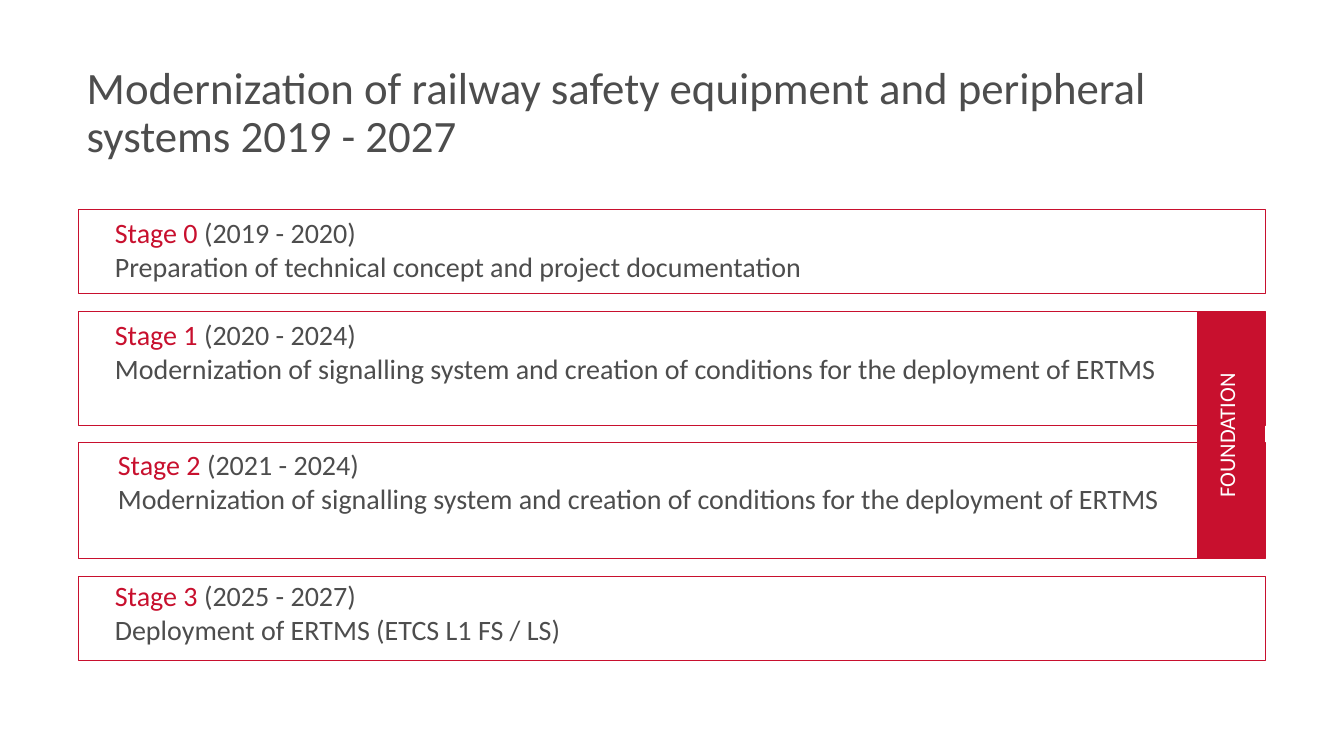
from pptx import Presentation
from pptx import util as u
from pptx.dml.color import RGBColor
from pptx.enum import shapes, text

THEME = {
    "font": "Calibri",
    "red": RGBColor.from_string("C8102E"),
    "grey": RGBColor.from_string("4D4D4D"),
    "white": RGBColor.from_string("FFFFFF"),
    "title": 32,
    "body": 20,
    "label": 16,
}
LEFT, WIDTH = 0.78, 11.77
FOUNDATION_WIDTH = 0.68
SIGNALLING = "Modernization of signalling system and creation of conditions for the deployment of ERTMS"
STAGES = [
    (2.08, 0.83, 1.04, 2.09, "Stage 0 ", "(2019 - 2020)",
     "Preparation of technical concept and project documentation"),
    (3.09, 1.13, 1.04, 3.1, "Stage 1 ", "(2020 - 2024)", SIGNALLING),
    (4.39, 1.15, 1.07, 4.39, "Stage 2 ", "(2021 - 2024)", SIGNALLING),
    (5.72, 0.83, 1.04, 5.69, "Stage 3 ", "(2025 - 2027)",
     "Deployment of ERTMS (ETCS L1 FS / LS)"),
]

deck = Presentation()
deck.slide_width, deck.slide_height = u.Inches(13.33), u.Inches(7.5)
slide = deck.slides.add_slide(deck.slide_layouts[5])


def add_run(paragraph, words, size, color):
    run = paragraph.add_run()
    run.text = words
    run.font.name = THEME["font"]
    run.font.size = u.Pt(THEME[size])
    run.font.color.rgb = THEME[color]


def add_panel(left, top, width, height):
    panel = slide.shapes.add_shape(
        shapes.MSO_SHAPE.ACTION_BUTTON_CUSTOM, *map(u.Inches, (left, top, width, height)))
    panel.shadow.inherit = False
    return panel


heading = slide.shapes.title
heading.left, heading.top, heading.width, heading.height = map(u.Inches, (0.76, 0.6, 11.81, 0.81))
heading.text_frame.word_wrap = True
heading.text_frame.auto_size = text.MSO_AUTO_SIZE.NONE
heading.text_frame.vertical_anchor = text.MSO_ANCHOR.TOP
heading_line = heading.text_frame.paragraphs[0]
heading_line.alignment = text.PP_ALIGN.LEFT
heading_line.line_spacing = 0.9
add_run(heading_line, "Modernization of railway safety equipment and peripheral systems 2019 - 2027",
        "title", "grey")

for top, height, text_left, text_top, stage, years, task in STAGES:
    frame = add_panel(LEFT, top, WIDTH, height)
    frame.fill.background()
    frame.line.color.rgb = THEME["red"]
    frame.line.width = u.Pt(1)

    description = slide.shapes.add_textbox(
        *map(u.Inches, (text_left, text_top, 11.25, 0.77))).text_frame
    description.word_wrap = True
    period = description.paragraphs[0]
    add_run(period, stage, "body", "red")
    add_run(period, years, "body", "grey")
    add_run(description.add_paragraph(), task, "body", "grey")

foundation = add_panel(LEFT + WIDTH - FOUNDATION_WIDTH, 3.09, FOUNDATION_WIDTH, 2.46)
foundation.fill.solid()
foundation.fill.fore_color.rgb = THEME["red"]
foundation.line.fill.background()

foundation_label = slide.shapes.add_textbox(*map(u.Inches, (11.98, 3.55, 0.58, 1.54))).text_frame
foundation_label.word_wrap = False
foundation_label._txBody.bodyPr.set("vert", "vert270")
foundation_line = foundation_label.paragraphs[0]
foundation_line.alignment = text.PP_ALIGN.CENTER
add_run(foundation_line, "FOUNDATION", "label", "white")

deck.save("out.pptx")
